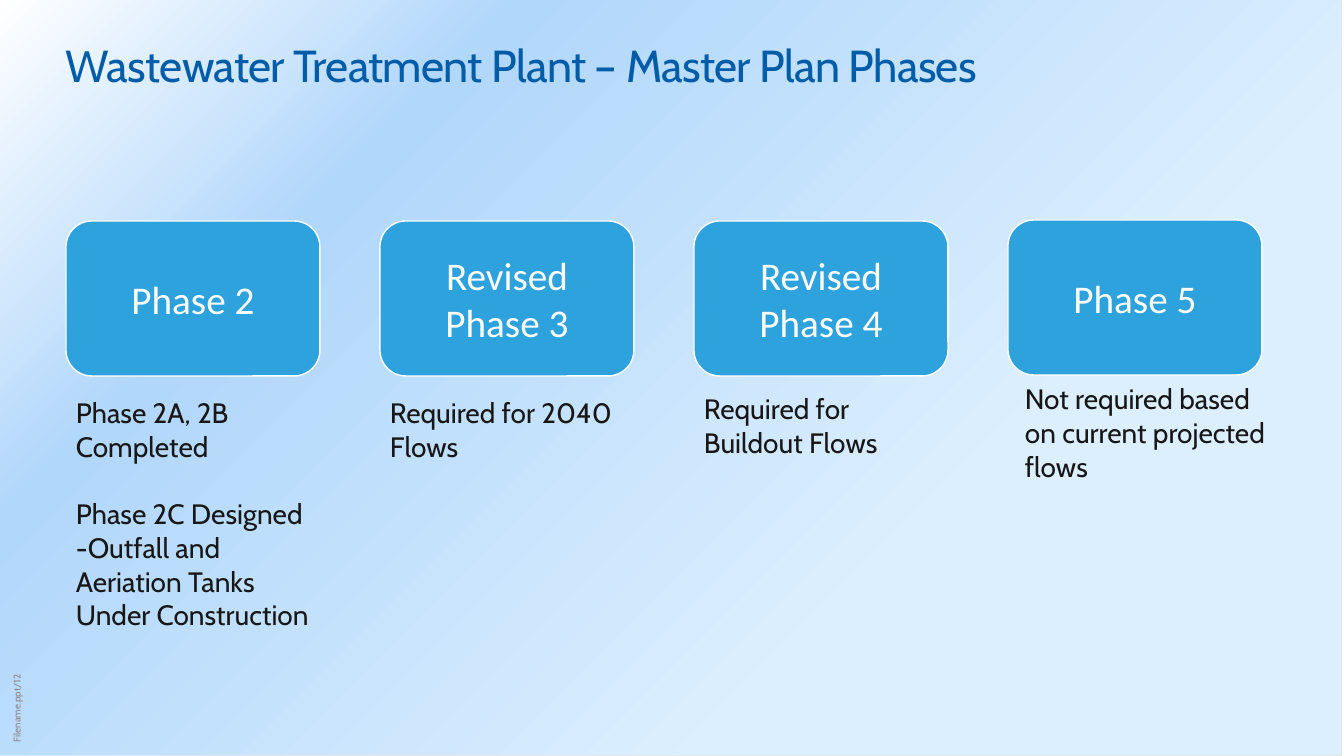
from lxml.etree import SubElement
from pptx import Presentation
from pptx.dml.color import RGBColor
from pptx.enum.shapes import MSO_SHAPE
from pptx.enum.text import MSO_ANCHOR, PP_ALIGN
from pptx.oxml.ns import qn
from pptx.util import Pt

SCALE = 914400 / 100.8  # EMU per px
COLORS = {
    "title": "015DA8", "card": "2DA2DC", "white": "FFFFFF", "ink": "181717",
    "foot": "8B8585", "edge": "E7E6E6", "sky": "B1D7FB", "pale": "DCEFFE",
}


def px(n):
    return round(n * SCALE)


def color(name):
    return RGBColor.from_string(COLORS[name])


class Deck:
    def __init__(self, font):
        self.font = font
        self.prs = Presentation()
        self.prs.slide_width, self.prs.slide_height = px(1344), px(756)
        self.slide = self.prs.slides.add_slide(self.prs.slide_layouts[6])

    def shape(self, kind, box, line, width):
        shape = self.slide.shapes.add_shape(kind, *map(px, box))
        shape.shadow.inherit = False
        shape.line.color.rgb = color(line)
        shape.line.width = Pt(width)
        return shape

    def wash(self, box, stops):
        """Rectangle with a diagonal gradient from the top left."""
        fill = self.shape(MSO_SHAPE.RECTANGLE, box, "edge", 0.75).fill
        fill.gradient()
        fill.gradient_angle = 315
        items = fill._fill._gradFill.find(qn("a:gsLst"))
        for old in list(items):
            items.remove(old)
        for at, name in stops:
            stop = SubElement(items, qn("a:gs"), pos=str(at * 1000))
            SubElement(stop, qn("a:srgbClr"), val=COLORS[name])

    def style(self, para, text, size, tint, font=None):
        para.text = text
        para.font.name = font or self.font
        para.font.size = Pt(size)
        para.font.color.rgb = color(tint)

    def card(self, box, text):
        card = self.shape(MSO_SHAPE.ROUNDED_RECTANGLE, box, "white", 1)
        card.fill.solid()
        card.fill.fore_color.rgb = color("card")
        frame = card.text_frame
        frame.word_wrap = True
        frame.vertical_anchor = MSO_ANCHOR.MIDDLE
        para = frame.paragraphs[0]
        para.alignment = PP_ALIGN.CENTER
        self.style(para, text, 28, "white", "Calibri")

    def text(self, box, lines, size, tint):
        """Text box; each line is a pair of text and space before in points."""
        shape = self.slide.shapes.add_textbox(*map(px, box))
        frame = shape.text_frame
        frame.word_wrap = True
        for i, (text, gap) in enumerate(lines):
            para = frame.add_paragraph() if i else frame.paragraphs[0]
            self.style(para, text, size, tint)
            para.space_before = Pt(gap)
        return shape


def main():
    deck = Deck("Cabin")

    # Background
    deck.wash((-2, 0, 1344, 756), [(0, "white"), (25, "sky"), (70, "pale"), (100, "pale")])

    # Side label
    label = deck.text((-118, 602, 269, 22), [("Filename.ppt/12", 0)], 7, "foot")
    label.rotation = 270
    frame = label.text_frame
    frame.vertical_anchor = MSO_ANCHOR.BOTTOM
    frame.margin_left = frame.margin_right = px(5)

    # Title
    title = deck.text((56, 33, 1232, 121),
                      [("Wastewater Treatment Plant – Master Plan Phases", 0)], 32, "title")
    run = title.text_frame.paragraphs[0].runs[0]
    run.font._element.set("spc", "-50")

    # Phases: card text, card top, note left shift, note top, note height, note lines
    phases = [
        ("Phase 2", 221, 0, 391, 248,
         [("Phase 2A, 2B Completed", 0), ("Phase 2C Designed", 24),
          ("-Outfall and Aeriation Tanks Under Construction", 0)]),
        ("Revised Phase 3", 221, 0, 391, 112, [("Required for 2040 Flows", 0)]),
        ("Revised Phase 4", 221, 0, 387, 112, [("Required for Buildout Flows", 0)]),
        ("Phase 5", 220, 7, 377, 146,
         [("Not required based on current projected flows", 0)]),
    ]
    for i, (name, top, shift, low, tall, lines) in enumerate(phases):
        left = 66 + 314 * i
        deck.card((left, top, 254, 155), name)
        deck.text((left + shift, low, 263, tall), lines, 20, "ink")

    deck.prs.save("out.pptx")


if __name__ == "__main__":
    main()
